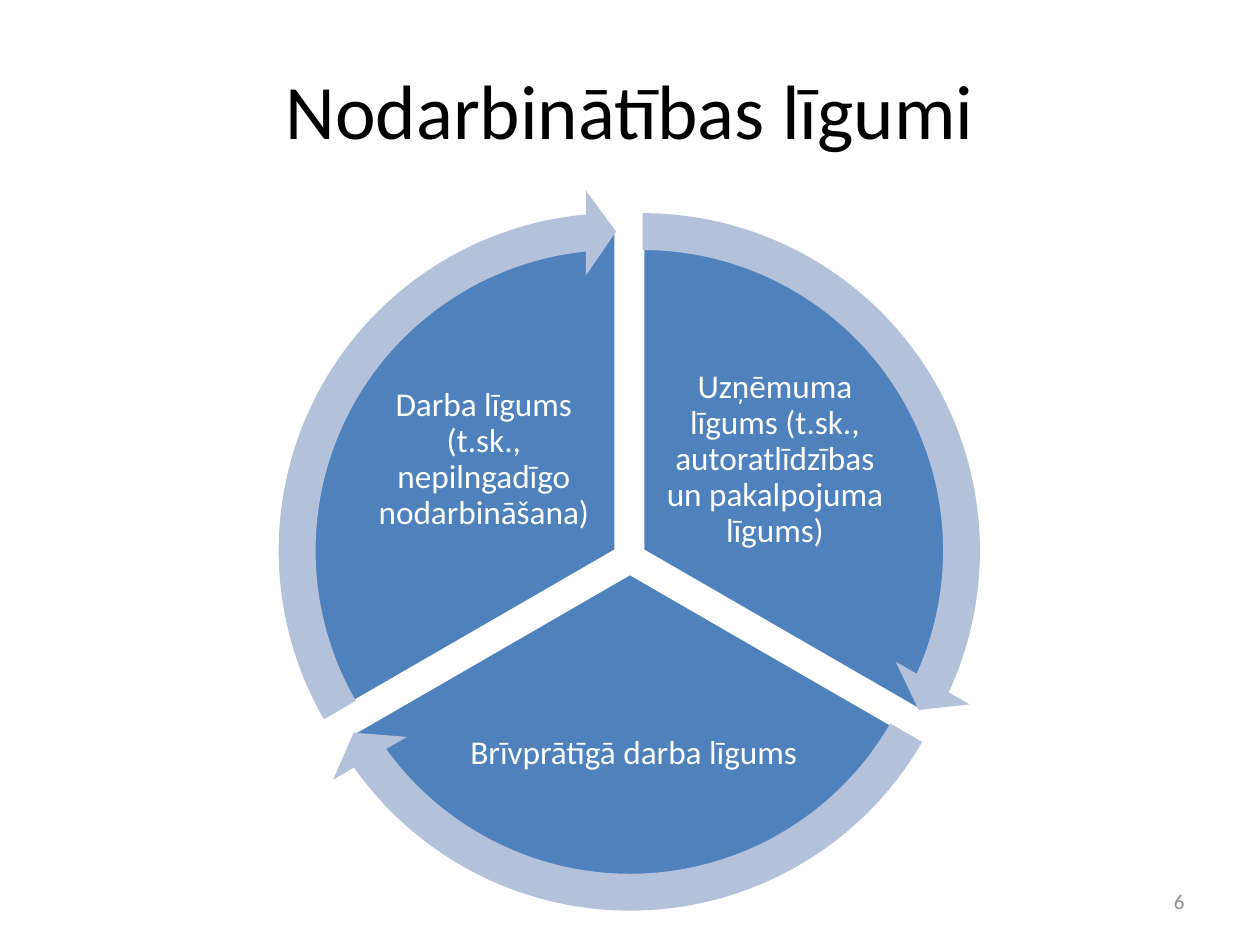
import pptx
import pptx.util
import pptx.dml.color
import pptx.enum.shapes
import pptx.enum.text

Inches = pptx.util.Inches
Pt = pptx.util.Pt
Shapes = pptx.enum.shapes.MSO_SHAPE
Align = pptx.enum.text.PP_ALIGN
FONT = "Calibri"
PIE_SIZE = 5.11
ARROW_SIZE = 5.74
HEAD_ANGLE = 3.275
SECTORS = [
    ("Uzņēmuma līgums (t.sk., autoratlīdzības un pakalpojuma līgums)",
     (5.1, 4.37), (162, 18), (5.24, 2.89, 1.82, 1.52)),
    ("Brīvprātīgā darba līgums",
     (5, 4.55), (18, 90), (3.66, 5.31, 2.74, 1.34)),
    ("Darba līgums (t.sk., nepilngadīgo nodarbināšana)",
     (4.89, 4.37), (90, 162), (2.93, 2.89, 1.82, 1.52)),
]


def color(value):
    return pptx.dml.color.RGBColor.from_string(value)


def write_text(shape, text, size, text_color, align):
    frame = shape.text_frame
    frame.word_wrap = True
    frame.vertical_anchor = pptx.enum.text.MSO_ANCHOR.MIDDLE
    para = frame.paragraphs[0]
    para.text = text
    para.alignment = align
    para.font.name = FONT
    para.font.size = Pt(size)
    para.font.color.rgb = color(text_color)
    return frame


def add_text(page, place, text, size, text_color, align):
    box = page.shapes.add_textbox(*map(Inches, place))
    return write_text(box, text, size, text_color, align)


def add_round_shape(page, kind, center, size, fill, adjustments):
    left, top = (Inches(middle - size / 2) for middle in center)
    shape = page.shapes.add_shape(kind, left, top, Inches(size), Inches(size))
    shape.shadow.inherit = False
    shape.fill.solid()
    shape.fill.fore_color.rgb = color(fill)
    shape.line.fill.background()
    for index, value in enumerate(adjustments):
        shape.adjustments[index] = value
    return shape


def add_sector(page, text, center, angles, label_place):
    pie = add_round_shape(page, Shapes.PIE, center, PIE_SIZE, "4F81BD", angles)
    pie.line.color.rgb = color("FFFFFF")
    pie.line.width = Pt(2)
    frame = add_text(page, label_place, text, 19, "FFFFFF", Align.CENTER)
    frame.margin_left = frame.margin_right = Inches(0.03)
    frame.margin_top = frame.margin_bottom = Inches(0.03)
    frame.paragraphs[0].line_spacing = 0.9


def add_arrow(page, center, angles):
    start, end = angles
    add_round_shape(page, Shapes.CIRCULAR_ARROW, center, ARROW_SIZE, "B3C1DB",
                    (0.051, HEAD_ANGLE, end - HEAD_ANGLE, start, 0.059))


def add_title(page, text):
    title = page.shapes.title
    title.left, title.top = Inches(0.5), Inches(0.24)
    title.width, title.height = Inches(9), Inches(1.25)
    write_text(title, text, 44, "000000", Align.CENTER)


def main():
    deck = pptx.Presentation()
    deck.slide_width, deck.slide_height = Inches(10), Inches(7.5)
    page = deck.slides.add_slide(deck.slide_layouts[5])
    add_title(page, "Nodarbinātības līgumi")
    for sector in SECTORS:
        add_sector(page, *sector)
    for _, center, angles, _ in SECTORS:
        add_arrow(page, center, angles)
    add_text(page, (7.17, 6.95, 2.33, 0.4), "6", 12, "8C8C8C", Align.RIGHT)
    deck.save("out.pptx")


if __name__ == "__main__":
    main()
